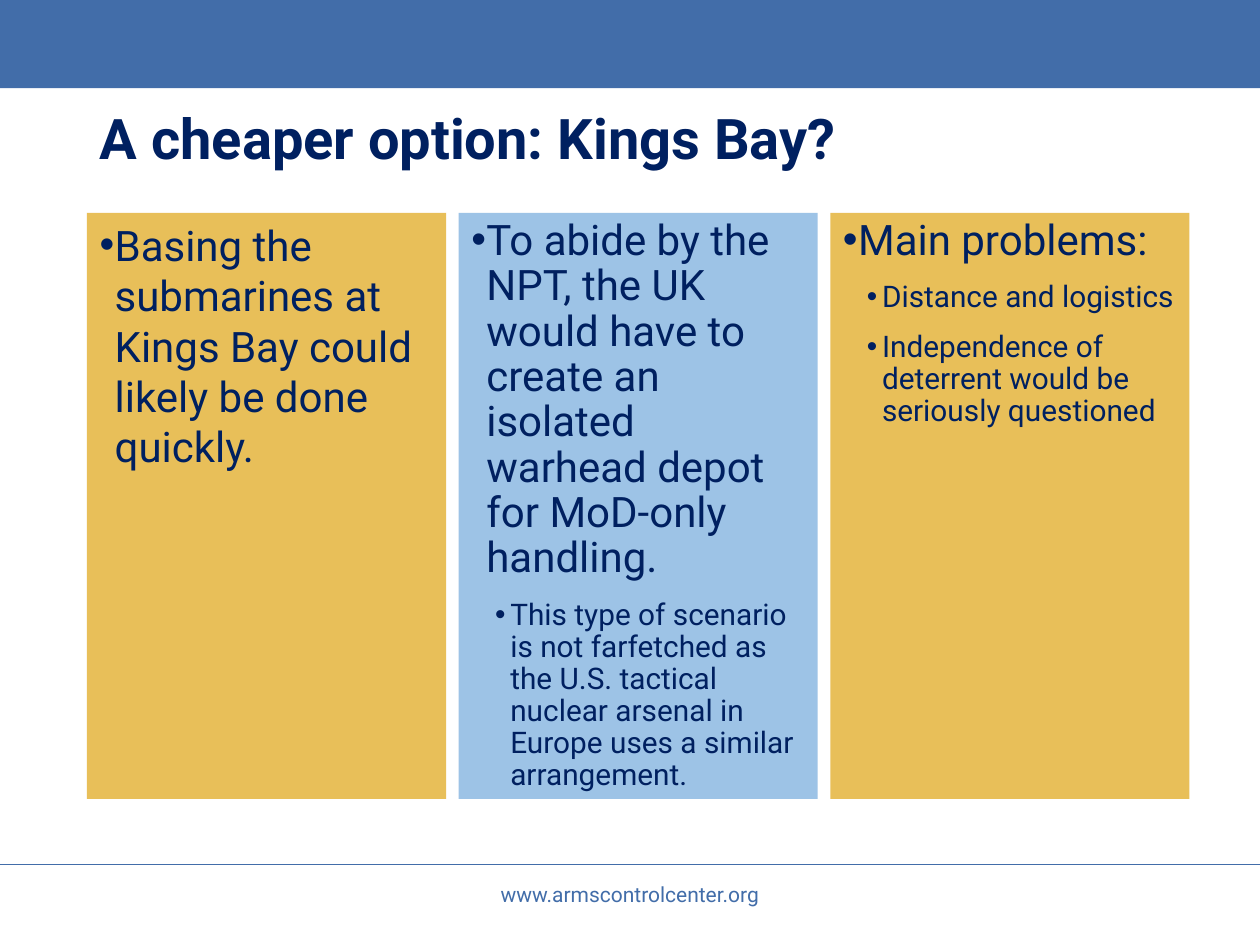
from lxml import etree
from pptx import Presentation
from pptx import util as u
from pptx.dml.color import RGBColor
from pptx.enum import shapes, text
from pptx.oxml.ns import qn

SCALE = 9144  # EMU per px, 100 px to the inch
HUES = {"blue": "426DA9", "navy": "002060", "gold": "E8BF59", "sky": "9DC3E6"}
SIZES = (24, 17)
INDENTS = (12, 31)
HANG = 12


class Deck:
    """Holds the style and the current slide."""

    def __init__(self, wide, high):
        self.prs = Presentation()
        self.prs.slide_width = self.px(wide)
        self.prs.slide_height = self.px(high)
        self.slide = self.prs.slides.add_slide(self.prs.slide_layouts.get_by_name("Comparison"))
        self.shapes = self.slide.shapes

    def px(self, size):
        return u.Emu(size * SCALE)

    def hue(self, name):
        return RGBColor.from_string(HUES[name])

    def place(self, shape, box):
        shape.left, shape.top, shape.width, shape.height = map(self.px, box)

    def style(self, par, size, hue, bold=False):
        for run in par.runs:
            font = run.font
            font.name, font.size, font.bold = "Roboto", u.Pt(size), bold
            font.color.rgb = self.hue(hue)

    def frame(self, shape, anchor):
        frame = shape.text_frame
        frame.word_wrap = True
        frame.auto_size = text.MSO_AUTO_SIZE.NONE
        frame.vertical_anchor = anchor
        return frame

    def line(self, x1, y1, x2, y2):
        line = self.shapes.add_connector(shapes.MSO_CONNECTOR.STRAIGHT,
                                         *map(self.px, (x1, y1, x2, y2)))
        line.line.color.rgb = self.hue("blue")
        line.line.width = u.Pt(0.5)
        etree.SubElement(line._element.spPr, qn("a:effectLst"))

    def band(self, *box):
        band = self.shapes.add_shape(shapes.MSO_SHAPE.RECTANGLE, *map(self.px, box))
        band.shadow.inherit = False
        band.fill.solid()
        band.fill.fore_color.rgb = self.hue("blue")
        band.line.fill.background()

    def title(self, words, *box):
        title = self.shapes.title
        self.place(title, box)
        frame = self.frame(title, text.MSO_ANCHOR.MIDDLE)
        frame.text = words
        par = frame.paragraphs[0]
        par.alignment = text.PP_ALIGN.LEFT
        par.line_spacing = 0.9
        self.style(par, 32, "navy", True)

    def label(self, words, *box):
        label = self.shapes.add_textbox(*map(self.px, box))
        frame = self.frame(label, text.MSO_ANCHOR.TOP)
        frame.text = words
        par = frame.paragraphs[0]
        par.alignment = text.PP_ALIGN.CENTER
        self.style(par, 12, "blue")

    def bullet(self, par, level):
        props = par._p.get_or_add_pPr()
        props.set("marL", str(self.px(INDENTS[level])))
        props.set("indent", str(self.px(-HANG)))
        etree.SubElement(props, qn("a:buFont"), typeface="Arial")
        etree.SubElement(props, qn("a:buChar"), char="•")

    def panel(self, slot, fill, items, space, *box):
        """Fill a body placeholder with (level, words) items."""
        panel = self.slide.placeholders[slot]
        self.place(panel, box)
        panel.fill.solid()
        panel.fill.fore_color.rgb = self.hue(fill)
        frame = self.frame(panel, text.MSO_ANCHOR.TOP)
        frame.text = "\n".join(words for _, words in items)
        for i, (par, (level, _)) in enumerate(zip(frame.paragraphs, items)):
            self.bullet(par, level)
            par.level = level
            par.line_spacing = space
            par.space_before = u.Pt(10 if i else 0)
            self.style(par, SIZES[level], "navy")

    def drop(self, slot):
        spare = self.slide.placeholders[slot]._element
        spare.getparent().remove(spare)

    def save(self):
        self.prs.save("out.pptx")


PANELS = [
    (1, "gold", 1.0, [
        (0, "Basing the submarines at Kings Bay could likely be done quickly.")]),
    (2, "sky", 0.9, [
        (0, "To abide by the NPT, the UK would have to create an isolated "
            "warhead depot for MoD-only handling."),
        (1, "This type of scenario is not farfetched as the U.S. tactical nuclear "
            "arsenal in Europe uses a similar arrangement.")]),
    (4, "gold", 0.9, [
        (0, "Main problems:"),
        (1, "Distance and logistics"),
        (1, "Independence of deterrent would be seriously questioned")]),
]


def main():
    deck = Deck(1000, 750)
    deck.line(-2, 686, 1000, 686)
    deck.band(0, 0, 1000, 70)
    deck.title("A cheaper option: Kings Bay?", 69, 40, 862, 145)
    deck.label("www.armscontrolcenter.org", 331, 695, 338, 40)
    wide, gap = 285, 10
    for col, (slot, fill, space, items) in enumerate(PANELS):
        deck.panel(slot, fill, items, space, 69 + col * (wide + gap), 169, wide, 465)
    deck.drop(3)
    deck.save()


if __name__ == "__main__":
    main()
